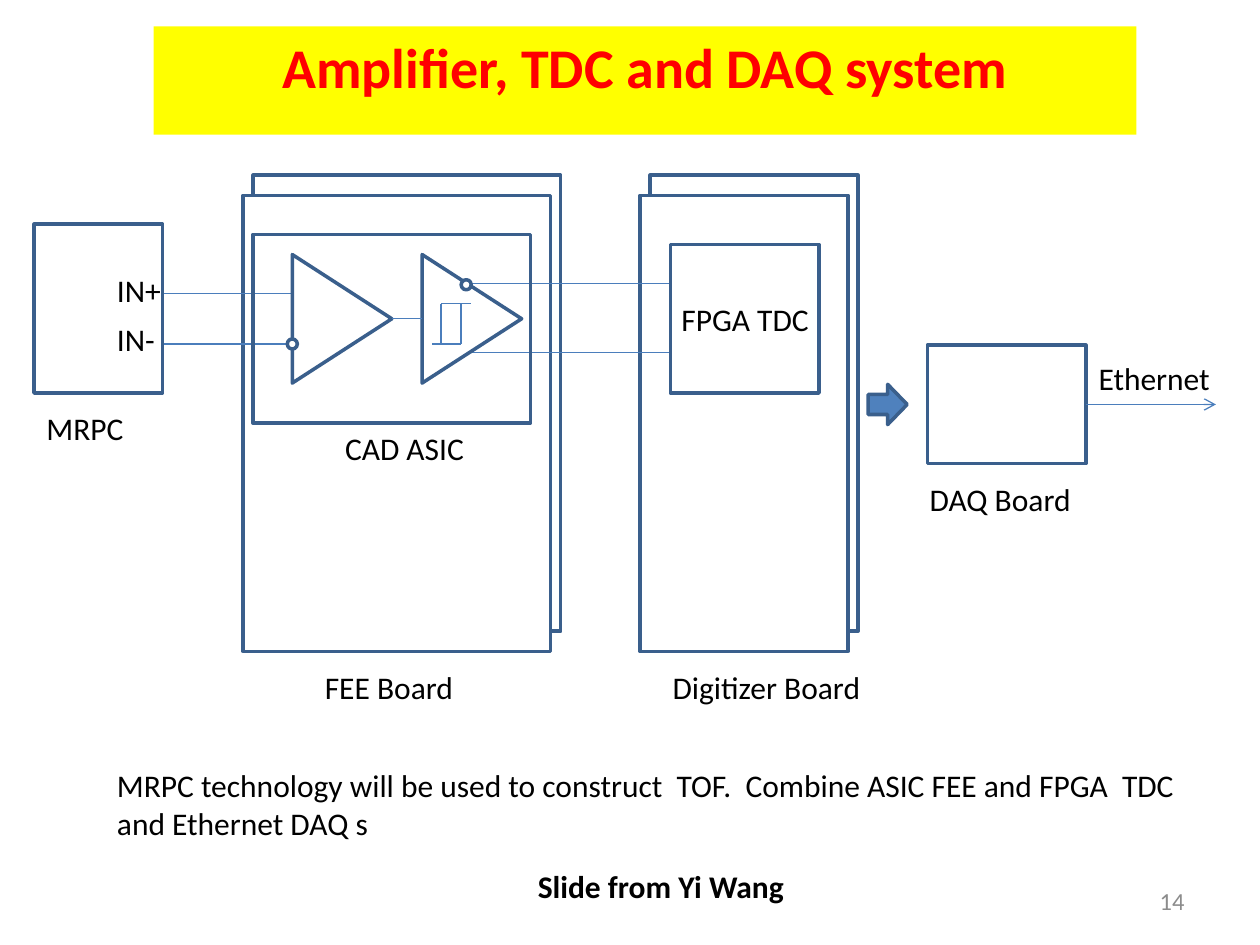
import dataclasses

import lxml.etree
import pptx
import pptx.dml.color
import pptx.enum.shapes
import pptx.enum.text
import pptx.oxml.ns
import pptx.util

PX = 9144
SHAPE = pptx.enum.shapes.MSO_SHAPE
ALIGN = pptx.enum.text.PP_ALIGN
ANCHOR = pptx.enum.text.MSO_ANCHOR


@dataclasses.dataclass(frozen=True)
class Theme:
    """Colours, font and type sizes of the slide."""
    font: str = "Calibri"
    text: str = "000000"
    muted: str = "8C8C8C"
    title: str = "FF0000"
    banner: str = "FFFF00"
    paper: str = "FFFFFF"
    outline: str = "3A5F8C"
    wire: str = "4B7EBC"
    arrow: str = "4F81BD"
    title_size: int = 32
    body_size: int = 18
    number_size: int = 14
    outline_width: float = 2
    wire_width: float = 0.75


@dataclasses.dataclass(frozen=True)
class Box:
    """A rectangle in px."""
    left: int
    top: int
    width: int
    height: int

    def inner(self, left, top, width, height):
        """Return a box placed relative to this one."""
        return Box(self.left + left, self.top + top, width, height)

    def emu(self):
        """Return left, top, width and height in EMU."""
        return [round(value * PX) for value in dataclasses.astuple(self)]


THEME = Theme()


def rgb(value):
    """Turn a hex string into a colour."""
    return pptx.dml.color.RGBColor.from_string(value)


def write_text(frame, text, size=THEME.body_size, color=THEME.text, bold=False,
               align=ALIGN.LEFT, anchor=ANCHOR.TOP, wrap=True):
    """Write formatted text into a text frame."""
    frame.word_wrap = wrap
    frame.auto_size = pptx.enum.text.MSO_AUTO_SIZE.NONE
    frame.vertical_anchor = anchor
    paragraph = frame.paragraphs[0]
    paragraph.alignment = align
    run = paragraph.add_run()
    run.text = text
    run.font.name = THEME.font
    run.font.size = pptx.util.Pt(size)
    run.font.bold = bold
    run.font.color.rgb = rgb(color)


def add_label(slide, box, text, **text_format):
    """Add a text box."""
    write_text(slide.shapes.add_textbox(*box.emu()).text_frame, text, **text_format)


def add_outline(slide, box, kind=SHAPE.RECTANGLE, fill=None):
    """Add an outlined shape, filled if a colour is given."""
    shape = slide.shapes.add_shape(kind, *box.emu())
    shape.shadow.inherit = False
    if fill:
        shape.fill.solid()
        shape.fill.fore_color.rgb = rgb(fill)
    else:
        shape.fill.background()
    shape.line.color.rgb = rgb(THEME.outline)
    shape.line.width = pptx.util.Pt(THEME.outline_width)
    return shape


def add_wires(slide, box, wires, arrow=False):
    """Add straight wires whose ends are relative to the box."""
    for x1, y1, x2, y2 in wires:
        ends = (box.left + x1, box.top + y1, box.left + x2, box.top + y2)
        wire = slide.shapes.add_connector(
            pptx.enum.shapes.MSO_CONNECTOR.STRAIGHT, *[end * PX for end in ends])
        wire.line.color.rgb = rgb(THEME.wire)
        wire.line.width = pptx.util.Pt(THEME.wire_width)
        if arrow:
            lxml.etree.SubElement(wire.line._get_or_add_ln(),
                                  pptx.oxml.ns.qn("a:tailEnd"), type="arrow")
        lxml.etree.SubElement(wire._element.spPr, pptx.oxml.ns.qn("a:effectLst"))


def draw_title(slide, box):
    """Place the title as a filled banner."""
    title = slide.shapes.title
    title.left, title.top, title.width, title.height = box.emu()
    title.fill.solid()
    title.fill.fore_color.rgb = rgb(THEME.banner)
    write_text(title.text_frame, "Amplifier, TDC and DAQ system", size=THEME.title_size,
               color=THEME.title, bold=True, align=ALIGN.CENTER)


def draw_detector(slide, box):
    """Draw the detector with its two outputs."""
    add_outline(slide, box)
    for top, text in ((32, "IN+"), (71, "IN-")):
        add_label(slide, box.inner(56, top, 63, 40), text)
    add_label(slide, box.inner(0, 142, 95, 40), "MRPC", wrap=False)


def draw_board_stack(slide, box, text, label_left, label_width):
    """Draw two overlapping boards with a label below."""
    width, height = box.width - 8, box.height - 16
    for left, top in ((8, 0), (0, 16)):
        add_outline(slide, box.inner(left, top, width, height), fill=THEME.paper)
    add_label(slide, box.inner(label_left, box.height + 8, label_width, 40), text)


def draw_signals(slide, box):
    """Draw the wires into the amplifier and on to the converter."""
    add_wires(slide, box, [(0, 8, 102, 8), (0, 48, 102, 48),
                           (241, 0, box.width, 0), (241, box.height, box.width, box.height)])


def draw_amplifier(slide, box):
    """Draw the chip with its amplifier and discriminator."""
    add_outline(slide, box)
    width, height = 79, 102
    shift = (height - width) / 2
    for left in (31, 134):
        triangle = add_outline(slide, box.inner(left - shift, 16 + shift, height, width),
                               SHAPE.ISOSCELES_TRIANGLE)
        triangle.rotation = 90
    add_wires(slide, box, [(110, 67, 134, 67), (142, 87, 165, 87), (149, 55, 173, 55),
                           (149, 87, 149, 55), (165, 87, 165, 55)])
    for left, top in ((27, 83), (165, 36)):
        add_outline(slide, box.inner(left, top, 8, 8), SHAPE.OVAL, THEME.paper)
    add_label(slide, box.inner(63, box.height, 126, 40), "CAD ASIC")


def draw_converter(slide, box):
    """Draw the time converter."""
    add_outline(slide, box)
    add_label(slide, box.inner(-1, 39, 134, 40), "FPGA TDC")


def draw_acquisition(slide, box):
    """Draw the acquisition board with its input and output."""
    add_outline(slide, box.inner(-47, 31, 31, 32), SHAPE.RIGHT_ARROW, THEME.arrow)
    add_outline(slide, box, fill=THEME.paper)
    add_label(slide, box.inner(-8, 102, 142, 40), "DAQ Board")
    add_label(slide, box.inner(box.width, 6, 118, 40), "Ethernet")
    add_wires(slide, box, [(box.width, 47, box.width + 103, 47)], arrow=True)


def draw_notes(slide, box):
    """Write the summary, the credit and the page number."""
    add_label(slide, box.inner(0, 0, 890, 71),
              "MRPC technology will be used to construct  TOF.  "
              "Combine ASIC FEE and FPGA  TDC and Ethernet DAQ s")
    add_label(slide, box.inner(334, 80, 217, 40), "Slide from Yi Wang", bold=True, wrap=False)
    add_label(slide, box.inner(815, 92, 52, 40), "14", size=THEME.number_size,
              color=THEME.muted, align=ALIGN.RIGHT, anchor=ANCHOR.MIDDLE)


def main():
    """Build and save the slide."""
    presentation = pptx.Presentation()
    presentation.slide_width, presentation.slide_height = 1000 * PX, 750 * PX
    slide = presentation.slides.add_slide(presentation.slide_layouts[5])
    draw_title(slide, Box(122, 21, 780, 86))
    draw_board_stack(slide, Box(508, 139, 173, 378), "Digitizer Board", 16, 173)
    draw_board_stack(slide, Box(193, 139, 252, 378), "FEE Board", 55, 126)
    draw_signals(slide, Box(130, 225, 402, 55))
    draw_amplifier(slide, Box(201, 186, 220, 150))
    draw_converter(slide, Box(532, 194, 118, 118))
    draw_detector(slide, Box(27, 178, 102, 134))
    draw_acquisition(slide, Box(736, 274, 126, 94))
    draw_notes(slide, Box(83, 603, 890, 132))
    presentation.save("out.pptx")


if __name__ == "__main__":
    main()
